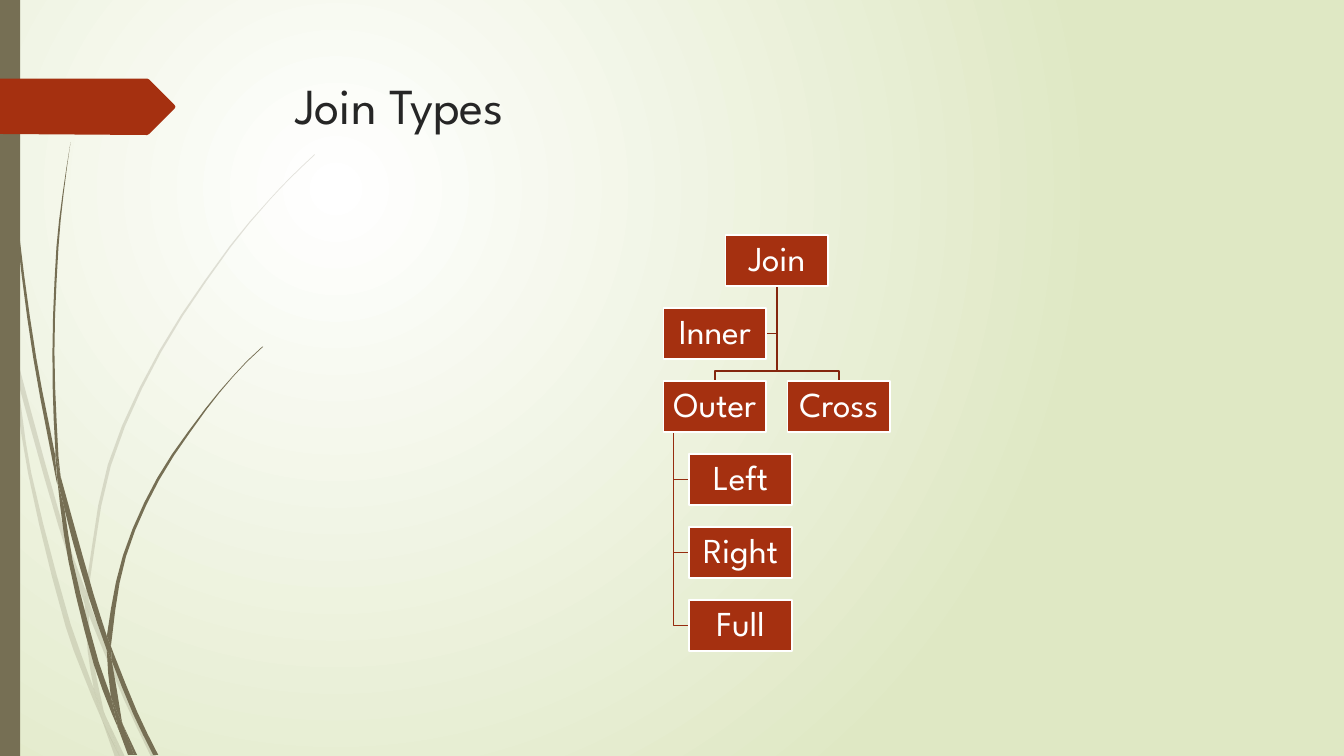
from dataclasses import dataclass
from math import dist

from lxml.etree import SubElement as Sub
from pptx import Presentation
from pptx.dml.color import RGBColor
from pptx.enum.shapes import MSO_SHAPE as Kind
from pptx.enum.text import MSO_ANCHOR as Anchor, PP_ALIGN as Align
from pptx.oxml.ns import qn
from pptx.shapes.autoshape import Shape
from pptx.slide import Slide
from pptx.util import Inches, Pt

Point = tuple[float, float]
Edge = list[Point]

WHITE = RGBColor(0xFF, 0xFF, 0xFF)
GREEN = RGBColor(0xDF, 0xE8, 0xC4)
OLIVE = RGBColor(0x76, 0x6F, 0x54)
RUST = RGBColor(0xA5, 0x30, 0x10)
BROWN = RGBColor(0x84, 0x26, 0x0D)
UMBER = RGBColor(0x96, 0x2C, 0x0F)
INK = RGBColor(0x26, 0x26, 0x26)
FONT = "League Spartan"
WIDTH, HEIGHT = 1.02, 0.51
TOP, STEP = 2.33, HEIGHT * 1.42
BEND = 0.1

PALE = [
    [[(0.11, 3.5), (0.09, 3.22), (0, 2.82)], [(0, 2.99), (0.1, 3.44)]],
    [[(0.17, 3.76), (0.58, 5.22), (0.84, 5.99)], [(0.85, 5.86), (0.62, 5.2), (0.14, 3.45)]],
    [[(0.88, 6.1), (1.23, 6.94), (1.5, 7.51)],
     [(1.55, 7.51), (1.27, 6.92), (0.92, 6.07), (0.88, 5.96)]],
    [[(1.19, 7.51)], [(1.24, 7.51), (1.05, 7.11)]],
    [[(0.99, 7.07), (0.93, 6.83), (0.7, 6.19), (0.31, 4.69), (0.17, 3.76), (0.11, 3.5)],
     [(0.11, 3.5), (0.28, 4.7), (0.65, 6.21), (0.92, 6.93), (1.01, 7.14)]],
    [[(0.84, 5.99), (0.87, 6.46), (0.93, 6.83), (0.96, 6.92), (1.05, 7.11)],
     [(1.03, 7.06), (0.91, 6.46), (0.88, 6.1), (0.88, 6.08)]],
    [[(0.88, 5.96), (0.88, 5.84), (1.1, 4.62), (1.6, 3.49), (2.29, 2.45), (2.68, 1.98),
      (2.9, 1.75), (3.12, 1.54)],
     [(3.12, 1.53), (2.89, 1.75), (2.68, 1.97), (2.28, 2.44), (1.58, 3.48), (1.07, 4.61),
      (0.85, 5.84), (0.85, 5.86)]],
    [[(1.01, 7.14), (1.14, 7.51)], [(1.19, 7.51)]],
    [[(0.88, 6.08), (0.88, 5.96)], [(0.85, 5.86), (0.84, 5.99)]],
    [[(0.93, 6.83), (0.99, 7.07), (1.01, 7.14), (1.19, 7.51)],
     [(1.05, 7.11), (0.96, 6.92)]],
]
DARK = [
    [[(0.03, 0), (0.04, 0.48), (0.07, 1.1), (0.17, 2.33), (0.33, 3.55), (0.56, 4.77), (0.57, 4.81)],
     [(0.55, 4.57), (0.55, 4.53), (0.36, 3.55), (0.19, 2.32), (0.08, 1.09), (0.05, 0.48), (0.04, 0)]],
    [[(0.6, 4.72), (0.64, 5.05), (0.88, 5.92), (1.06, 6.45)],
     [(1.06, 6.33), (1.06, 6.31), (0.93, 5.9), (0.6, 4.72)]],
    [[(1.11, 6.56), (1.32, 7.08), (1.52, 7.49)],
     [(1.57, 7.49), (1.36, 7.06), (1.13, 6.49), (1.1, 6.41)]],
    [[(1.16, 7.17), (1.1, 6.91), (0.98, 6.57), (0.72, 5.56), (0.64, 5.05), (0.57, 4.77)],
     [(0.57, 4.77), (0.68, 5.57), (0.93, 6.59), (1.11, 7.08), (1.17, 7.22)]],
    [[(0.6, 4.72), (0.58, 4.53), (0.54, 3.49), (0.58, 2.45), (0.63, 1.93), (0.7, 1.41)],
     [(0.7, 1.41), (0.62, 1.93), (0.56, 2.45), (0.52, 3.49), (0.55, 4.49), (0.6, 4.72)]],
    [[(1.33, 7.49)], [(1.36, 7.49), (1.22, 7.19)]],
    [[(0.57, 4.77), (0.64, 5.05)], [(0.6, 4.72), (0.55, 4.49), (0.55, 4.53)]],
    [[(1.11, 6.33), (1.25, 5.52), (1.58, 4.76), (2.05, 4.06), (2.31, 3.74), (2.45, 3.59), (2.61, 3.44)],
     [(2.6, 3.44), (2.45, 3.58), (2.31, 3.73), (2.04, 4.05), (1.56, 4.74), (1.22, 5.51), (1.06, 6.31)],
     [(1.1, 6.41)]],
    [[(1.17, 7.22), (1.27, 7.49)], [(1.31, 7.49)]],
    [[(1.06, 6.45), (1.1, 6.91), (1.16, 7.06), (1.22, 7.19)],
     [(1.21, 7.16), (1.11, 6.56), (1.09, 6.51)]],
    [[(1.06, 6.45), (1.09, 6.51), (1.11, 6.56)], [(1.1, 6.41), (1.06, 6.31)]],
    [[(1.1, 6.91), (1.16, 7.17), (1.17, 7.22), (1.3, 7.49)],
     [(1.33, 7.49), (1.22, 7.19), (1.16, 7.06)]],
]
BANNER = [(0, 0.78), (1.46, 0.78), (1.48, 0.79), (1.73, 1.04), (1.74, 1.06),
          (1.73, 1.08), (1.48, 1.33), (1.46, 1.34), (0, 1.33)]


@dataclass
class Node:
    text: str
    left: float
    row: int

    @property
    def top(self) -> float:
        return TOP + self.row * STEP

    @property
    def base(self) -> float:
        return self.top + HEIGHT

    @property
    def mid(self) -> float:
        return self.left + WIDTH / 2

    @property
    def level(self) -> float:
        return self.top + HEIGHT / 2


INNER = Node("Inner", 6.58, 1)
OUTER = Node("Outer", 6.58, 2)
CROSS = Node("Cross", 7.81, 2)
JOIN = Node("Join", (OUTER.left + CROSS.left) / 2, 0)
LEAVES = [Node(text, OUTER.left + WIDTH / 4, row)
          for row, text in enumerate(("Left", "Right", "Full"), 3)]


def smooth(edge: Edge) -> Edge:
    if len(edge) < 3:
        return edge
    spans = [dist(a, b) for a, b in zip(edge, edge[1:])]
    chords = [[(b[n] - a[n]) / span for n in (0, 1)]
              for a, b, span in zip(edge, edge[1:], spans)]
    slopes = [[(c[n] * h + d[n] * k) / (h + k) for n in (0, 1)]
              for c, d, h, k in zip(chords, chords[1:], spans, spans[1:])]
    first, final = ([1.5 * chords[i][n] - 0.5 * slopes[i][n] for n in (0, 1)] for i in (0, -1))
    slopes = [first, *slopes, final]
    curve = edge[:1]
    for i, span in enumerate(spans):
        a, b = edge[i], edge[i + 1]
        count = 1 if span < 0.3 else 2 if span < 0.7 else 3
        for t in (s / count for s in range(1, count + 1)):
            u = t * t * (3 - 2 * t)
            p, q = span * t * (1 - t) ** 2, span * t * t * (t - 1)
            curve.append(tuple(a[n] + (b[n] - a[n]) * u + slopes[i][n] * p + slopes[i + 1][n] * q
                               for n in (0, 1)))
    return curve


def outline(slide: Slide, points: Edge, closed: bool) -> Shape:
    spots = [(Inches(x), Inches(y)) for x, y in points]
    pen = slide.shapes.build_freeform(*spots[0])
    pen.add_line_segments(spots[1:], close=closed)
    shape = pen.convert_to_shape()
    shape.shadow.inherit = False
    return shape


def paint(shape: Shape, color: RGBColor, alpha: int = 100) -> None:
    shape.fill.solid()
    shape.fill.fore_color.rgb = color
    shape.line.fill.background()
    if alpha < 100:
        tint = shape._element.spPr.find(qn("a:solidFill")).find(qn("a:srgbClr"))
        Sub(tint, qn("a:alpha"), val=str(alpha * 1000))


def border(shape: Shape, color: RGBColor) -> None:
    shape.line.color.rgb = color
    shape.line.width = Pt(1.25)


def link(slide: Slide, points: Edge, color: RGBColor) -> None:
    shape = outline(slide, points, False)
    shape.fill.background()
    border(shape, color)


def write(shape: Shape, text: str, size: int, color: RGBColor) -> None:
    shape.text_frame.word_wrap = True
    para = shape.text_frame.paragraphs[0]
    para.text = text
    para.font.size, para.font.name = Pt(size), FONT
    para.font.color.rgb = color


def block(slide: Slide, x: float, y: float, w: float, h: float, color: RGBColor) -> Shape:
    shape = slide.shapes.add_shape(Kind.RECTANGLE, Inches(x), Inches(y), Inches(w), Inches(h))
    shape.shadow.inherit = False
    paint(shape, color)
    return shape


def draw(slide: Slide, node: Node) -> None:
    shape = block(slide, node.left, node.top, WIDTH, HEIGHT, RUST)
    border(shape, WHITE)
    write(shape, node.text, 25, WHITE)
    frame = shape.text_frame
    frame.margin_left = frame.margin_right = frame.margin_top = frame.margin_bottom = Inches(0.02)
    frame.vertical_anchor = Anchor.MIDDLE
    frame.paragraphs[0].alignment = Align.CENTER
    frame.paragraphs[0].line_spacing = 0.9


def backdrop(slide: Slide) -> None:
    fill = slide.background.fill
    fill.gradient()
    for stop, color in zip(fill.gradient_stops, (WHITE, GREEN)):
        stop.color.rgb = color
    grad = next(slide.element.iter(qn("a:gradFill")))
    grad.remove(grad.find(qn("a:lin")))
    ring = Sub(grad, qn("a:path"), path="circle")
    Sub(ring, qn("a:fillToRect"), l="50000", t="50000", r="100000", b="100000")


def main() -> None:
    deck = Presentation()
    deck.slide_width, deck.slide_height = Inches(13.33), Inches(7.5)
    slide = deck.slides.add_slide(deck.slide_layouts[6])
    backdrop(slide)
    for blades, alpha in ((PALE, 20), (DARK, 100)):
        for edges in blades:
            points = [point for edge in edges for point in smooth(edge)]
            paint(outline(slide, points, True), OLIVE, alpha)
    block(slide, 0, 0, 0.2, 7.5, OLIVE)
    paint(outline(slide, BANNER, True), RUST)
    title = slide.shapes.add_textbox(Inches(2.83), Inches(0.69), Inches(9.75), Inches(1.4))
    write(title, "Join Types", 36, INK)
    start = (JOIN.mid, JOIN.base)
    link(slide, [start, (JOIN.mid, INNER.level), (INNER.left + WIDTH, INNER.level)], BROWN)
    for node in (CROSS, OUTER):
        turn = node.top - BEND
        link(slide, [start, (JOIN.mid, turn), (node.mid, turn), (node.mid, node.top)], BROWN)
    trunk = OUTER.left + BEND
    for leaf in reversed(LEAVES):
        link(slide, [(trunk, OUTER.base), (trunk, leaf.level), (leaf.left, leaf.level)], UMBER)
    for node in (JOIN, OUTER, *LEAVES, CROSS, INNER):
        draw(slide, node)
    deck.save("out.pptx")


if __name__ == "__main__":
    main()
